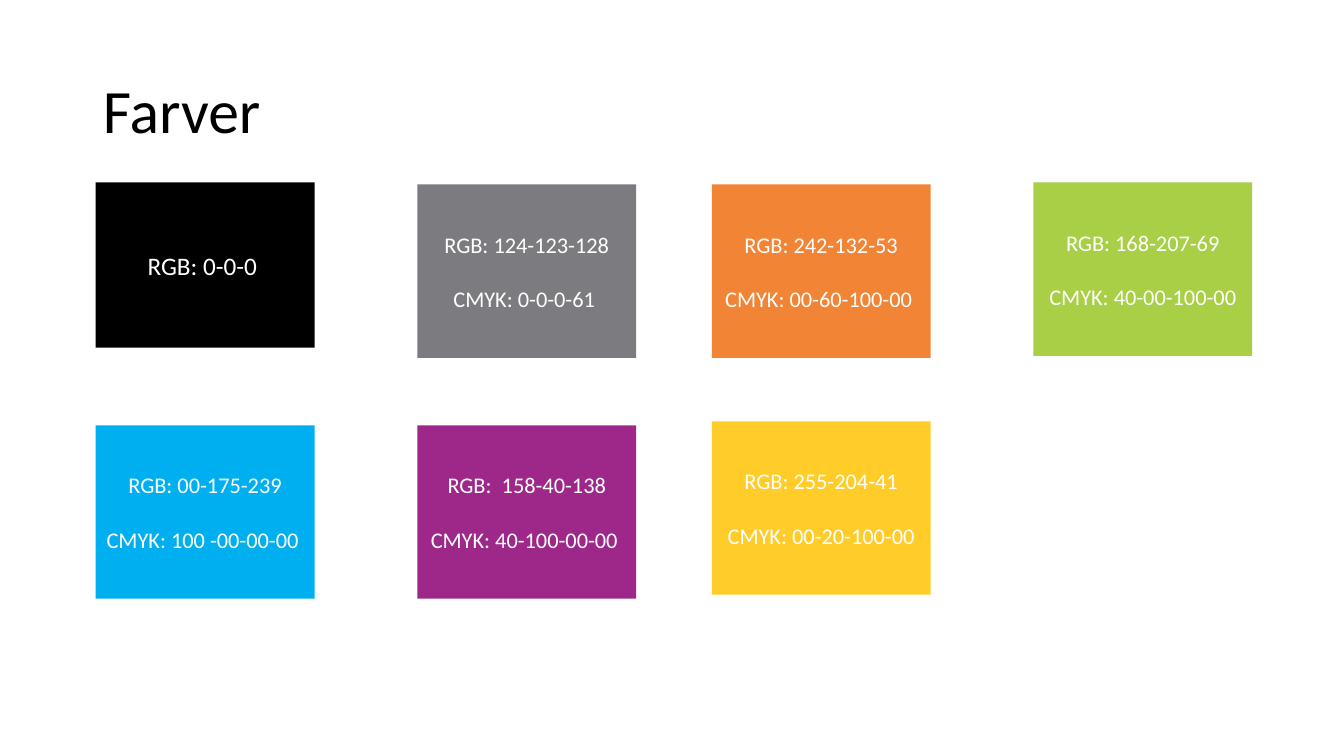
from dataclasses import dataclass

from pptx import Presentation
from pptx.dml.color import RGBColor
from pptx.enum.shapes import MSO_SHAPE
from pptx.enum.text import MSO_ANCHOR, MSO_AUTO_SIZE, PP_ALIGN
from pptx.util import Inches, Pt


@dataclass(frozen=True)
class Theme:
    font: str = "Calibri"
    title_color: str = "000000"
    label_color: str = "FFFFFF"
    title_size: float = 44
    single_size: float = 18
    label_size: float = 16
    line_gap: float = 19.5
    black: str = "000000"
    gray: str = "7C7B80"
    orange: str = "F28435"
    green: str = "A8CF45"
    blue: str = "00AFEF"
    purple: str = "9E288A"
    yellow: str = "FFCC29"


theme = Theme()


def add_run(p, text, size, color):
    r = p.add_run()
    r.text = text
    r.font.name = theme.font
    r.font.size = Pt(size)
    r.font.color.rgb = RGBColor.from_string(color)


prs = Presentation()
prs.slide_width, prs.slide_height = Inches(13.33), Inches(7.5)
s = prs.slides.add_slide(prs.slide_layouts[5])

# Title
title = s.shapes.title
title.left, title.top = Inches(0.92), Inches(0.4)
title.width, title.height = Inches(11.5), Inches(1.45)
tf = title.text_frame
tf.auto_size = MSO_AUTO_SIZE.NONE
tf.vertical_anchor = MSO_ANCHOR.MIDDLE
p = tf.paragraphs[0]
p.alignment = PP_ALIGN.LEFT
p.line_spacing = 0.9
add_run(p, "Farver", theme.title_size, theme.title_color)

# Colour swatches: column, top, height, fill, label lines
columns = [0.95, 4.14, 7.06, 10.25]
swatch_width = 2.17
swatches = [
    (0, 1.81, 1.64, theme.black, ["RGB: 0-0-0 "]),
    (1, 1.83, 1.72, theme.gray, ["RGB: 124-123-128", "CMYK: 0-0-0-61 "]),
    (2, 1.83, 1.72, theme.orange, ["RGB: 242-132-53", "CMYK: 00-60-100-00 "]),
    (3, 1.81, 1.72, theme.green, ["RGB: 168-207-69", "CMYK: 40-00-100-00"]),
    (0, 4.22, 1.72, theme.blue, ["RGB: 00-175-239", "CMYK: 100 -00-00-00 "]),
    (1, 4.22, 1.72, theme.purple, ["RGB:  158-40-138", "CMYK: 40-100-00-00 "]),
    (2, 4.18, 1.72, theme.yellow, ["RGB: 255-204-41", "CMYK: 00-20-100-00"]),
]
for column, top, height, fill, lines in swatches:
    sp = s.shapes.add_shape(MSO_SHAPE.RECTANGLE, Inches(columns[column]), Inches(top),
                            Inches(swatch_width), Inches(height))
    sp.shadow.inherit = False
    sp.fill.solid()
    sp.fill.fore_color.rgb = RGBColor.from_string(fill)
    sp.line.fill.background()
    tf = sp.text_frame
    tf.word_wrap = True
    tf.vertical_anchor = MSO_ANCHOR.MIDDLE
    size = theme.single_size if len(lines) == 1 else theme.label_size
    for i, line in enumerate(lines):
        p = tf.add_paragraph() if i else tf.paragraphs[0]
        p.alignment = PP_ALIGN.CENTER
        if i:
            p.space_before = Pt(theme.line_gap)
        add_run(p, line, size, theme.label_color)

prs.save("out.pptx")
